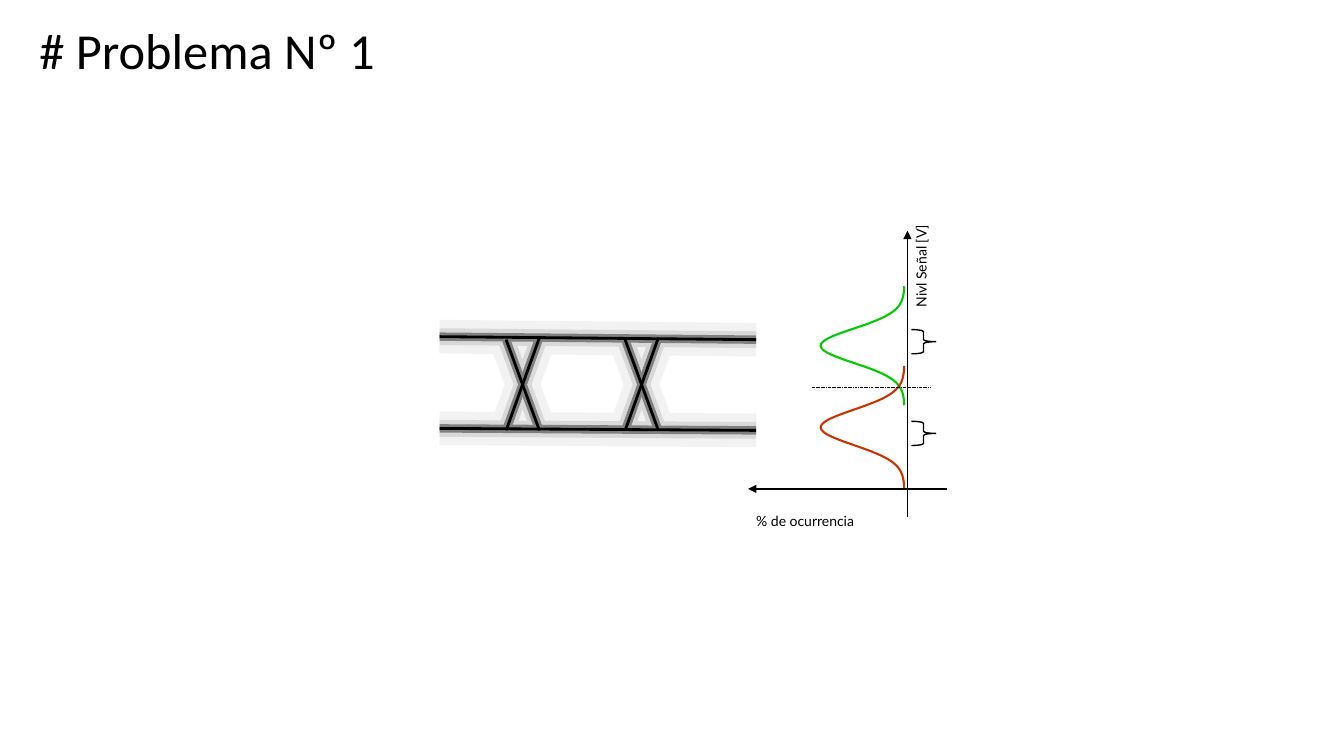
from math import exp

from lxml.etree import SubElement
from pptx import Presentation
from pptx.dml.color import RGBColor
from pptx.enum.dml import MSO_LINE as Dash
from pptx.enum.shapes import MSO_CONNECTOR as Conn, MSO_SHAPE as Kind
from pptx.enum.text import MSO_ANCHOR as Anchor, MSO_AUTO_SIZE as Auto, PP_ALIGN as Align
from pptx.oxml.ns import qn
from pptx.util import Inches, Pt

CELL = 0.1
BLACK = "000000"


def size(cells):
    return Inches(cells * CELL)


def paint(code):
    return RGBColor.from_string(code)


class Sketch:
    """Draws styled elements on one slide, on a grid of tenth-inch cells."""

    def __init__(self, deck):
        self.slide = deck.slides.add_slide(deck.slide_layouts[5])
        self.shapes = self.slide.shapes
        self.head = "Calibri"
        self.body = "Lato"

    def font(self, para, face, points):
        para.alignment = Align.LEFT
        para.font.name = face
        para.font.size = Pt(points)
        para.font.color.rgb = paint(BLACK)

    def pen(self, shape, color, width):
        shape.line.color.rgb = paint(color)
        shape.line.width = Pt(width)

    def title(self, text, *box):
        shape = self.shapes.title
        shape.left, shape.top, shape.width, shape.height = map(size, box)
        frame = shape.text_frame
        frame.text = text
        frame.auto_size = Auto.NONE
        frame.vertical_anchor = Anchor.TOP
        self.font(frame.paragraphs[0], self.head, 36)

    def label(self, text, *box, turn=0):
        shape = self.shapes.add_textbox(*map(size, box))
        shape.rotation = turn
        frame = shape.text_frame
        frame.text = text
        frame.word_wrap = False
        frame.vertical_anchor = Anchor.BOTTOM
        frame.margin_left = frame.margin_right = 0
        frame.margin_top = frame.margin_bottom = 0
        para = frame.paragraphs[0]
        para.line_spacing = Pt(26)
        self.font(para, self.body, 10)

    def line(self, ends, color=BLACK, width=1.0, dash=None, arrow=False, group=None):
        home = group.shapes if group else self.shapes
        link = home.add_connector(Conn.STRAIGHT, *map(size, ends))
        self.pen(link, color, width)
        if dash:
            link.line.dash_style = dash
        props = link._element.spPr
        if arrow:
            SubElement(props.find(qn("a:ln")), qn("a:tailEnd"), type="triangle")
        SubElement(props, qn("a:effectLst"))

    def layer(self, lines, color, width):
        group = self.shapes.add_group_shape()
        for ends in lines:
            self.line(ends, color, width, group=group)

    def outline(self, shape, color, width):
        shape.shadow.inherit = False
        shape.fill.background()
        self.pen(shape, color, width)

    def bell(self, mid, reach, sigma, color, base=89.7, peak=8.3, steps=120):
        rows = [mid + reach * (1 - 2 * i / steps) for i in range(steps + 1)]
        dots = [(size(base - peak * exp(-((row - mid) / sigma) ** 2 / 2)), size(row))
                for row in rows]
        path = self.shapes.build_freeform(*dots[0])
        path.add_line_segments(dots[1:], close=False)
        self.outline(path.convert_to_shape(), color, 1.5)

    def brace(self, *box):
        shape = self.shapes.add_shape(Kind.RIGHT_BRACE, *map(size, box))
        self.outline(shape, BLACK, 1)


def main():
    deck = Presentation()
    deck.slide_width, deck.slide_height = Inches(13.33), Inches(7.5)
    page = Sketch(deck)
    page.title("# Problema Nº 1", 2.9, 1.4, 49.4, 7.1)

    eye = [(75, 33.7, 43.6, 33.4), (75, 42.7, 43.6, 42.5)]
    for left in (50.2, 62):
        eye += [(left + 3.3, 42.7, left, 33.7), (left, 42.7, left + 3.3, 33.5)]
    for color, width in (("F2F2F2", 24), ("D9D9D9", 12), ("808080", 6), (BLACK, 2)):
        page.layer(eye, color, width)

    page.bell(34.3, 5.9, 1.7, "00CC00")
    page.bell(42.4, 6.1, 1.75, "CC3300")
    page.line((80.5, 38.4, 92.3, 38.4), width=0.25, dash=Dash.LONG_DASH_DOT)
    page.line((90, 51.3, 90, 22.9), arrow=True)
    page.line((93.9, 48.5, 74.2, 48.5), arrow=True)
    for top in (32.7, 41.8):
        page.brace(90.4, top, 2.4, 2.4)
    page.label("% de ocurrencia", 75, 48.9, 9.8, 3.6)
    page.label("Nivl Señal [V]", 86.2, 24.5, 8.4, 3.6, turn=270)

    deck.save("out.pptx")


if __name__ == "__main__":
    main()
